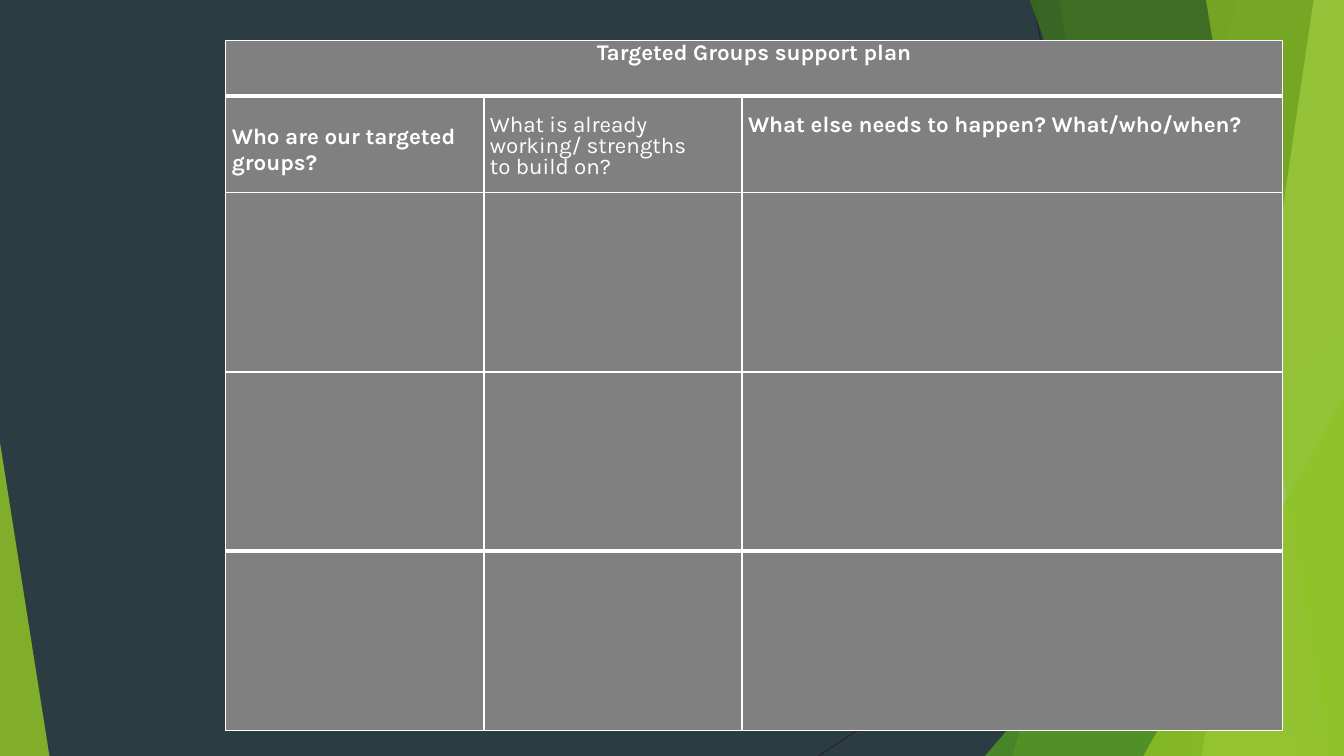
from lxml.etree import SubElement
from pptx import Presentation
from pptx.dml.color import RGBColor
from pptx.enum.shapes import MSO_CONNECTOR, MSO_SHAPE
from pptx.enum.text import PP_ALIGN
from pptx.oxml import parse_xml
from pptx.oxml.ns import nsdecls, qn
from pptx.util import Inches, Pt

COLORS = {"back": "2C3C43", "line": "262626", "lime": "90C226", "green": "54A021",
          "dark": "3F7819", "pale": "C0E474", "cell": "808080", "white": "FFFFFF"}
WIDTH, HEIGHT = 13.33, 7.5
TOP = -0.01


def color(name):
    return RGBColor.from_string(COLORS[name])


class SlideBuilder:
    font = {"name": "Karla", "size": Pt(16)}

    def __init__(self, page):
        self.page = page
        page.background.fill.solid()
        page.background.fill.fore_color.rgb = color("back")

    def paint(self, shape, fill, opacity):
        shape.shadow.inherit = False
        shape.fill.solid()
        shape.fill.fore_color.rgb = color(fill)
        shape.line.fill.background()
        srgb = shape._element.spPr.find(f"{qn('a:solidFill')}/{qn('a:srgbClr')}")
        SubElement(srgb, qn("a:alpha")).set("val", str(opacity * 1000))

    def line(self, start, end):
        points = [Inches(value) for value in (*start, *end)]
        connector = self.page.shapes.add_connector(MSO_CONNECTOR.STRAIGHT, *points)
        connector.line.color.rgb = color("line")
        connector.line.width = Pt(0.75)
        SubElement(connector._element.spPr, qn("a:effectLst"))

    def polygon(self, points, fill, opacity):
        corners = [(Inches(x), Inches(y)) for x, y in points]
        builder = self.page.shapes.build_freeform(*corners[0])
        builder.add_line_segments(corners[1:], close=True)
        self.paint(builder.convert_to_shape(), fill, opacity)

    def band(self, top_x, bottom_x, fill, opacity):
        """A band that runs from a slanted left edge to the slide's right edge."""
        self.polygon([(top_x, TOP), (WIDTH, TOP), (WIDTH, HEIGHT), (bottom_x, HEIGHT)],
                     fill, opacity)

    def triangle(self, left, top, width, apex, fill, opacity):
        box = [Inches(value) for value in (left, top, width, HEIGHT - top)]
        shape = self.page.shapes.add_shape(MSO_SHAPE.ISOSCELES_TRIANGLE, *box)
        shape.adjustments[0] = apex
        self.paint(shape, fill, opacity)

    def table(self, left, top, columns, rows):
        frame = self.page.shapes.add_table(len(rows), len(columns), Inches(left), Inches(top),
                                           Inches(sum(columns)), Inches(sum(rows)))
        table = frame.table
        table.first_row = table.horz_banding = False
        for column, width in zip(table.columns, columns):
            column.width = Inches(width)
        for row, height in zip(table.rows, rows):
            row.height = Inches(height)
        return table

    def style_cell(self, cell, **edges):
        """Fill the cell and draw its borders; edges gives widths other than 1 pt."""
        cell.fill.solid()
        cell.fill.fore_color.rgb = color("cell")
        properties = cell._tc.get_or_add_tcPr()
        for index, side in enumerate("LRTB"):
            properties.insert(index, parse_xml(
                f'<a:ln{side} {nsdecls("a")} w="{Pt(edges.get(side, 1))}"><a:solidFill>'
                f'<a:srgbClr val="{COLORS["white"]}"/></a:solidFill></a:ln{side}>'))

    def cell_text(self, cell, text, margins, bold=True, **layout):
        sides = ("margin_left", "margin_top", "margin_right", "margin_bottom")
        for name, value in zip(sides, margins):
            setattr(cell, name, Inches(value))
        para = cell.text_frame.paragraphs[0]
        for name, value in layout.items():
            setattr(para, name, value)
        span = para.add_run()
        span.text = text
        for name, value in {**self.font, "bold": bold}.items():
            setattr(span.font, name, value)
        span.font.color.rgb = color("white")


def main():
    deck = Presentation()
    deck.slide_width, deck.slide_height = Inches(WIDTH), Inches(HEIGHT)
    slide = SlideBuilder(deck.slides.add_slide(deck.slide_layouts[6]))

    # Background facets
    slide.line((10.25, 0), (11.58, HEIGHT))
    slide.line((WIDTH, 4.03), (8.12, HEIGHT))
    slide.band(12.28, 10.04, "lime", 30)
    slide.band(10.5, 11.83, "lime", 20)
    slide.triangle(9.77, 3.33, 3.56, 1, "green", 72)
    slide.band(10.21, 12.91, "dark", 70)
    slide.band(13.03, 11.92, "pale", 70)
    slide.band(11.96, 13.18, "lime", 65)
    slide.triangle(11.34, 3.93, 1.99, 1, "lime", 80)
    slide.triangle(0, 4.39, 0.49, 0, "lime", 85)

    # Support plan table, with thick rules under the title and above the last row
    plan = slide.table(2.24, 0.4, [2.56] * 3, [0.55, 0.96] + [1.78] * 3)
    edges = {0: {"B": 3}, 1: {"T": 3}, 3: {"B": 3}, 4: {"T": 3}}
    for index, row in enumerate(plan.rows):
        for cell in row.cells:
            slide.style_cell(cell, **edges.get(index, {}))

    # Title and column headings
    plan.cell(0, 0).merge(plan.cell(0, 2))
    slide.cell_text(plan.cell(0, 0), "Targeted Groups support plan", (2.66, 0, 2.66, 0),
                    alignment=PP_ALIGN.CENTER)
    slide.cell_text(plan.cell(1, 0), "Who are our targeted groups?", (0.06, 0.28, 0, 0))
    slide.cell_text(plan.cell(1, 1), "What is already working/ strengths to build on?",
                    (0.06, 0.21, 0.45, 0), bold=False, line_spacing=Pt(15))
    slide.cell_text(plan.cell(1, 2), "What else needs to happen? What/who/when?",
                    (0.06, 0.21, 0, 0), line_spacing=Pt(15))

    deck.save("out.pptx")


if __name__ == "__main__":
    main()
